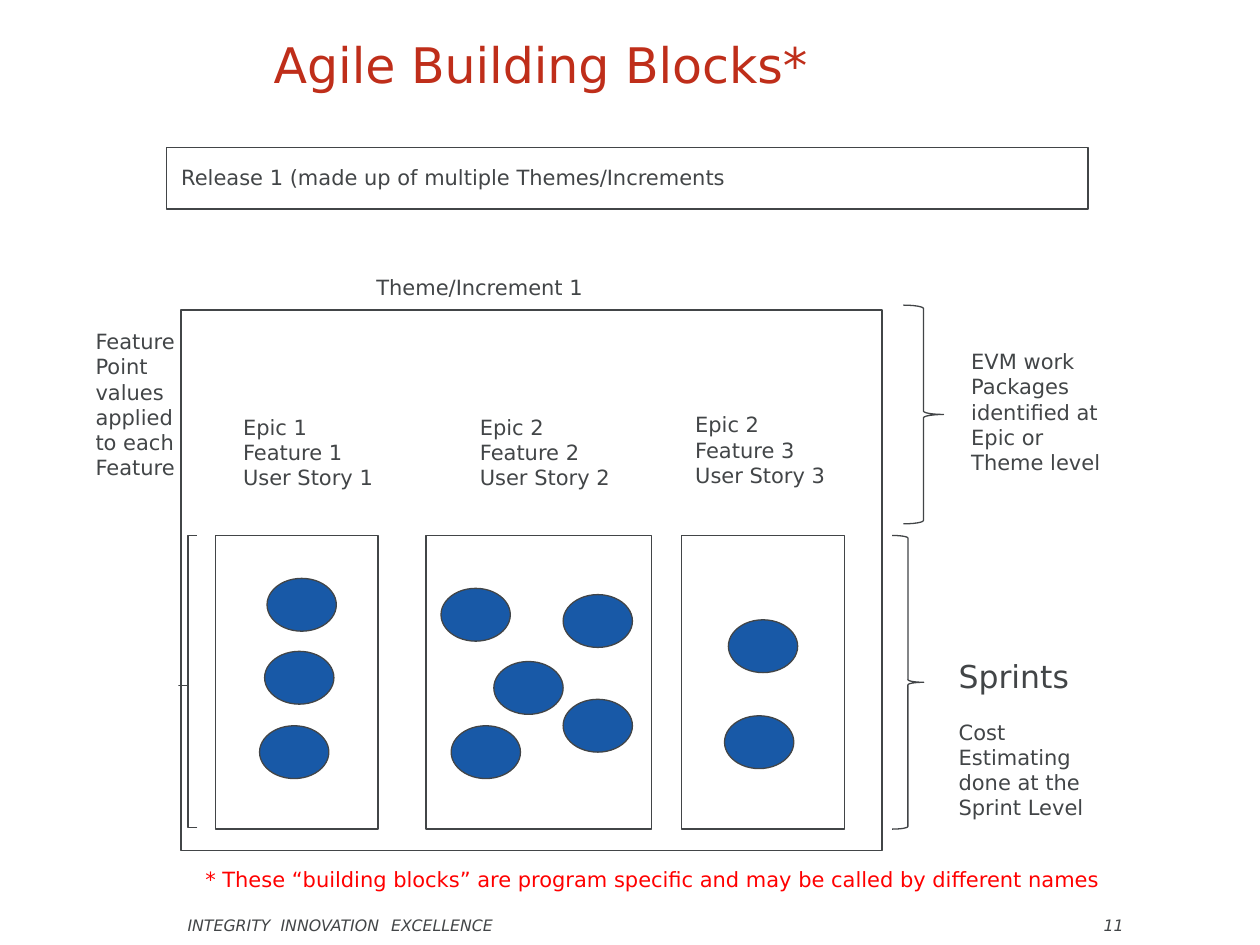
import pptx
import pptx.dml.color
import pptx.enum.shapes
import pptx.enum.text
import pptx.util
from lxml import etree

Pt = pptx.util.Pt
RGBColor = pptx.dml.color.RGBColor
SHAPES = pptx.enum.shapes.MSO_SHAPE
ANCHOR = pptx.enum.text.MSO_ANCHOR
ALIGN = pptx.enum.text.PP_ALIGN

INK = RGBColor(0x42, 0x45, 0x47)
TITLE_RED = RGBColor(0xBF, 0x2E, 0x1A)
NOTE_RED = RGBColor(0xFF, 0x00, 0x00)
SPRINT_BLUE = RGBColor(0x18, 0x59, 0xA7)
FONT = "DejaVu Sans"

CARD_TOP, CARD_HEIGHT = 306, 167.8
SPRINT_SIZE = (39.6, 30.2)

# Each card: left, width, then the top left corners of its sprints
CARDS = [
    (123.1, 92.9, [(152.6, 330.5), (151.2, 372.2), (148.3, 414.7)]),
    (243.4, 128.9, [(252, 336.2), (321.8, 339.8), (282.2, 378),
                    (321.8, 399.6), (257.8, 414.7)]),
    (389.5, 92.9, [(416.2, 354.2), (414, 409)]),
]

# Each label: left, top, width, height, lines
LABELS = [
    (131.8, 233.3, 95.8, 51, ["Epic 1", "Feature 1", "User Story 1"]),
    (267.1, 233.3, 99.4, 51, ["Epic 2", "Feature 2", "User Story 2"]),
    (390.2, 231.8, 95.8, 51, ["Epic 2 Feature 3", "User Story 3"]),
    (208, 153.4, 202.3, 21.8, ["Theme/Increment 1"]),
    (96.5, 90.7, 540, 21.8, ["Release 1 (made up of multiple Themes/Increments"]),
    (540.7, 407.5, 99.4, 65.5, ["Cost Estimating done at the Sprint Level"]),
    (547.9, 195.8, 99.4, 80, ["EVM work Packages identified at Epic or Theme level"]),
    (47.5, 184.3, 63.4, 94.5, ["Feature Point values applied to each Feature"]),
]


def add_outline(page, kind, left, top, width, height, fill=None):
    shape = page.shapes.add_shape(kind, Pt(left), Pt(top), Pt(width), Pt(height))
    shape.shadow.inherit = False
    if fill is None:
        shape.fill.background()
    else:
        shape.fill.solid()
        shape.fill.fore_color.rgb = fill
    shape.line.color.rgb = INK
    shape.line.width = Pt(0.75)
    return shape


def add_brace(page, left, top, width, height, curve, middle=0.5, rotation=0):
    brace = add_outline(page, SHAPES.RIGHT_BRACE, left, top, width, height)
    brace.adjustments[0] = curve
    brace.adjustments[1] = middle
    brace.rotation = rotation


def add_text(page, left, top, width, height, lines, size=12, color=INK,
             align=ALIGN.LEFT, anchor=ANCHOR.TOP, italic=False):
    box = page.shapes.add_textbox(Pt(left), Pt(top), Pt(width), Pt(height))
    frame = box.text_frame
    frame.word_wrap = True
    frame.vertical_anchor = anchor
    frame.text = "\n".join(lines)
    for para in frame.paragraphs:
        para.alignment = align
        for span in para.runs:
            span.font.name = FONT
            span.font.size = Pt(size)
            span.font.italic = italic
            span.font.color.rgb = color
    return box


def add_tab_stops(para, positions):
    namespace = "{http://schemas.openxmlformats.org/drawingml/2006/main}"
    properties = para._p.get_or_add_pPr()
    stops = etree.SubElement(properties, namespace + "tabLst")
    for position in positions:
        etree.SubElement(stops, namespace + "tab", pos=str(Pt(position)), algn="l")


def main():
    deck = pptx.Presentation()
    deck.slide_width, deck.slide_height = Pt(720), Pt(540)
    page = deck.slides.add_slide(deck.slide_layouts[6])

    # Title
    add_text(page, 54, 12.2, 509.8, 48.2, ["Agile Building Blocks*"], 28,
             TITLE_RED, ALIGN.CENTER, ANCHOR.MIDDLE)

    # Release and theme frames
    add_outline(page, SHAPES.RECTANGLE, 95.2, 84.4, 526.5, 35)
    add_outline(page, SHAPES.RECTANGLE, 103.5, 177.1, 400.5, 308.9)

    # Feature cards with their sprints
    for left, width, sprints in CARDS:
        add_outline(page, SHAPES.RECTANGLE, left, CARD_TOP, width, CARD_HEIGHT)
        for corner in sprints:
            add_outline(page, SHAPES.OVAL, *corner, *SPRINT_SIZE, SPRINT_BLUE)

    # Braces
    add_brace(page, 509.8, CARD_TOP, 18, CARD_HEIGHT, 0.083)
    add_brace(page, 516.2, 174.4, 23, 125, 0.084)
    add_brace(page, 102.2, CARD_TOP, 10.6, 167, 0, 0.488, 180)

    # Labels
    for left, top, width, height, lines in LABELS:
        add_text(page, left, top, width, height, lines)
    add_text(page, 540.7, 372.2, 84.2, 28.8, ["Sprints"], 18)
    add_text(page, 110.2, 491.8, 599, 21.8,
             ["* These “building blocks” are program specific and may be "
              "called by different names"], color=NOTE_RED)

    # Footer
    footer = add_text(page, 100.1, 517, 595.4, 23,
                      ["INTEGRITY\tINNOVATION\tEXCELLENCE\t11"], 9,
                      anchor=ANCHOR.MIDDLE, italic=True)
    add_tab_stops(footer.text_frame.paragraphs[0], [53.2, 116.4, 523.5])

    deck.save("out.pptx")


if __name__ == "__main__":
    main()
